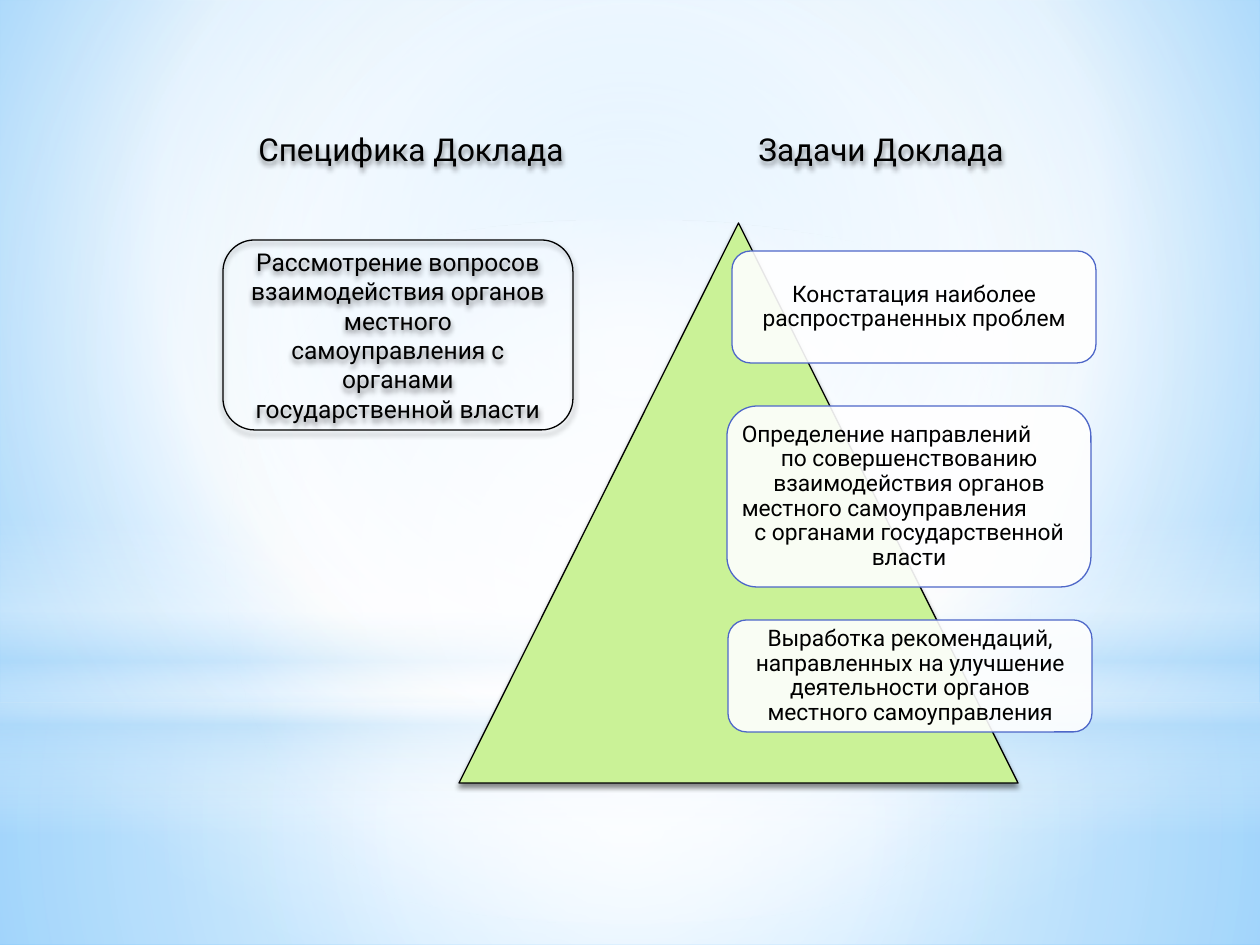
from lxml import etree
from pptx import Presentation
from pptx import util as u
from pptx.dml.color import RGBColor
from pptx.enum import shapes, text
from pptx.oxml.ns import qn

PX = 914400 / 126
FONT = "Roboto"
COLORS = {
    "ink": "000000", "white": "FFFFFF", "mist": "B4DCFA", "sky": "9ED5FF",
    "deep": "5BB9FF", "lime": "CAF297", "indigo": "4E67C8",
}
KINDS = shapes.MSO_SHAPE
LEFT, CENTER = text.PP_ALIGN.LEFT, text.PP_ALIGN.CENTER


def px(length):
    """Turn a length in px into EMU."""
    return u.Emu(round(length * PX))


def rgb(name):
    """Look up a palette colour."""
    return RGBColor.from_string(COLORS[name])


def add_color(parent, name, alpha=100):
    """Append a colour element with an opacity in percent."""
    color = etree.SubElement(parent, qn("a:srgbClr"), val=COLORS[name])
    if alpha < 100:
        etree.SubElement(color, qn("a:alpha"), val=str(alpha * 1000))


def paint_gradient(element, stops, center=(50, 50, 50, 50), angle=None):
    """Replace the first solid fill in an element with a gradient."""
    solid = element.find(".//" + qn("a:solidFill"))
    gradient = etree.Element(qn("a:gradFill"), rotWithShape="1")
    stop_list = etree.SubElement(gradient, qn("a:gsLst"))
    for position, name, alpha in stops:
        stop = etree.SubElement(stop_list, qn("a:gs"), pos=str(position * 1000))
        add_color(stop, name, alpha)
    if angle is None:
        circle = etree.SubElement(gradient, qn("a:path"), path="circle")
        edges = {side: str(share * 1000) for side, share in zip("ltrb", center)}
        etree.SubElement(circle, qn("a:fillToRect"), **edges)
    else:
        etree.SubElement(gradient, qn("a:lin"), ang=str(angle * 60000), scaled="0")
    solid.getparent().replace(solid, gradient)


def cast_shadow(shape):
    """Give a shape a soft shadow straight below it."""
    shape.shadow.inherit = False
    effects = shape._element.spPr.find(qn("a:effectLst"))
    shadow = etree.SubElement(
        effects, qn("a:outerShdw"), blurRad=str(u.Pt(3.1)), dist=str(u.Pt(1.8)),
        dir="5400000", algn="ctr", rotWithShape="0")
    add_color(shadow, "ink", 45)


def add_figure(slide, kind, box, fill=None, alpha=100, line=None):
    """Add a preset shape with a flat fill and an optional outline."""
    figure = slide.shapes.add_shape(kind, *map(px, box))
    figure.shadow.inherit = False
    if fill:
        figure.fill.solid()
        figure.fill.fore_color.rgb = rgb(fill)
        if alpha < 100:
            color = figure._element.spPr.find(".//" + qn("a:srgbClr"))
            etree.SubElement(color, qn("a:alpha"), val=str(alpha * 1000))
    else:
        figure.fill.background()
    if line:
        figure.line.color.rgb = rgb(line)
        figure.line.width = u.Pt(0.75)
    else:
        figure.line.fill.background()
    return figure


def write(shape, lines, size, spacing=None, margin=None):
    """Write (wording, alignment) paragraphs into a shape."""
    frame = shape.text_frame
    frame.word_wrap = True
    frame.auto_size = text.MSO_AUTO_SIZE.NONE
    frame.vertical_anchor = text.MSO_ANCHOR.MIDDLE
    if margin is not None:
        frame.margin_left = frame.margin_right = px(margin)
        frame.margin_top = frame.margin_bottom = px(margin)
    for index, (wording, alignment) in enumerate(lines):
        paragraph = frame.add_paragraph() if index else frame.paragraphs[0]
        paragraph.alignment = alignment
        if spacing:
            paragraph.line_spacing = spacing
        run = paragraph.add_run()
        run.text = wording
        run.font.name = FONT
        run.font.size = u.Pt(size)
        run.font.color.rgb = rgb("ink")


def add_backdrop(slide):
    """Paint the sky background and its translucent layers."""
    slide.background.fill.solid()
    paint_gradient(slide._element, [(0, "sky", 100), (60, "white", 100), (100, "deep", 100)],
                   center=(20, 10, 20, 60))
    layers = [
        (KINDS.RECTANGLE, (0, 703, 1260, 242),
         [(0, "white", 91), (37, "white", 76), (100, "mist", 79)], None),
        (KINDS.RECTANGLE, (0, 0, 1260, 703),
         [(0, "white", 89), (48, "white", 62), (100, "mist", 79)], None),
        (KINDS.RECTANGLE, (0, 519, 1260, 315),
         [(0, "white", 0), (29, "white", 30), (45, "mist", 40),
          (55, "white", 26), (65, "mist", 60), (100, "white", 0)], 90),
        (KINDS.OVAL, (0, 220, 1260, 703), [(0, "white", 100), (56, "white", 0)], None),
    ]
    for kind, box, stops, angle in layers:
        layer = add_figure(slide, kind, box, fill="white")
        paint_gradient(layer._element.spPr, stops, angle=angle)


def add_headings(slide, headings, centers):
    """Set the column headings in the title, each centred on a tab stop."""
    title = slide.shapes.title
    left, top, width, height = 83, 98, 1106, 102
    title.left, title.top, title.width, title.height = map(px, (left, top, width, height))
    write(title, [("".join("\t" + heading for heading in headings), LEFT)], 18)
    title.text_frame.margin_left = 0
    properties = title.text_frame.paragraphs[0]._p.get_or_add_pPr()
    tabs = etree.SubElement(properties, qn("a:tabLst"))
    for center in centers:
        etree.SubElement(tabs, qn("a:tab"), pos=str(px(center - left)), algn="ctr")
    cast_shadow(title)
    slide.shapes._spTree.append(title._element)


def add_task(slide, box, lines):
    """Add one translucent task card."""
    card = add_figure(slide, KINDS.ROUNDED_RECTANGLE, box, "white", 90, "indigo")
    write(card, lines, 13, spacing=0.9, margin=6)


def main():
    """Build the slide and save it."""
    deck = Presentation()
    deck.slide_width, deck.slide_height = px(1260), px(945)
    slide = deck.slides.add_slide(deck.slide_layouts[5])
    add_backdrop(slide)
    add_headings(slide, ("Специфика Доклада", "Задачи Доклада"), (411, 881))

    pyramid = add_figure(slide, KINDS.ISOSCELES_TRIANGLE, (459, 223, 559, 560),
                         "lime", line="ink")
    cast_shadow(pyramid)

    tasks = [
        ((732, 251, 364, 112),
         [("Констатация наиболее распространенных проблем", CENTER)]),
        ((727, 406, 364, 181),
         [("Определение направлений", LEFT),
          ("по совершенствованию взаимодействия органов", CENTER),
          ("местного самоуправления", LEFT),
          ("с органами государственной власти", CENTER)]),
        ((728, 620, 364, 112),
         [("Выработка рекомендаций, направленных на улучшение "
           "деятельности органов местного самоуправления", CENTER)]),
    ]
    for box, lines in tasks:
        add_task(slide, box, lines)

    focus = add_figure(slide, KINDS.ROUNDED_RECTANGLE, (223, 240, 350, 190), line="ink")
    write(focus, [("Рассмотрение вопросов взаимодействия органов местного "
                   "самоуправления с органами государственной власти", CENTER)], 14)
    cast_shadow(focus)
    deck.save("out.pptx")


if __name__ == "__main__":
    main()
